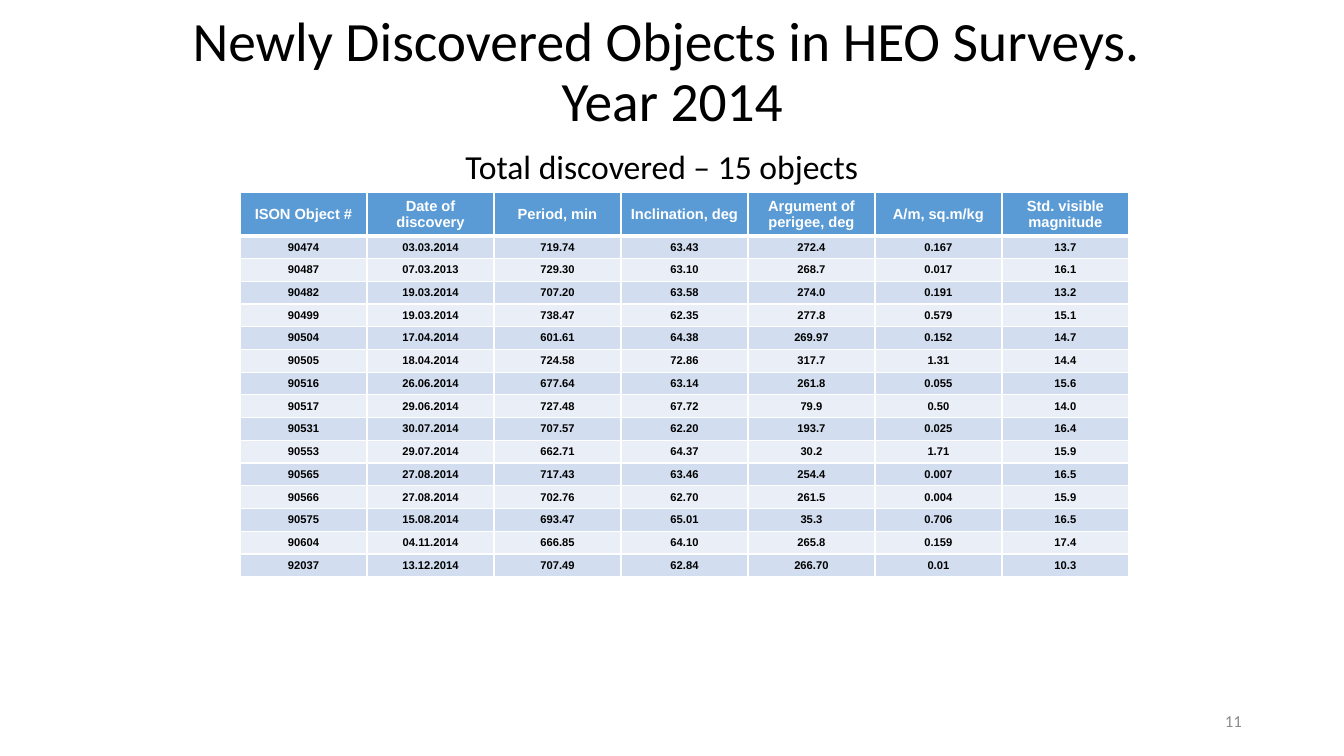
from lxml.etree import SubElement
from pptx import Presentation
from pptx.dml.color import RGBColor
from pptx.enum.text import MSO_ANCHOR, PP_ALIGN
from pptx.oxml.ns import qn
from pptx.util import Cm, Pt

HEADINGS = ["ISON Object #", "Date of discovery", "Period, min", "Inclination, deg",
            "Argument of perigee, deg", "A/m, sq.m/kg", "Std. visible magnitude"]
DISCOVERIES = """
90474 03.03.2014 719.74 63.43 272.4 0.167 13.7
90487 07.03.2013 729.30 63.10 268.7 0.017 16.1
90482 19.03.2014 707.20 63.58 274.0 0.191 13.2
90499 19.03.2014 738.47 62.35 277.8 0.579 15.1
90504 17.04.2014 601.61 64.38 269.97 0.152 14.7
90505 18.04.2014 724.58 72.86 317.7 1.31 14.4
90516 26.06.2014 677.64 63.14 261.8 0.055 15.6
90517 29.06.2014 727.48 67.72 79.9 0.50 14.0
90531 30.07.2014 707.57 62.20 193.7 0.025 16.4
90553 29.07.2014 662.71 64.37 30.2 1.71 15.9
90565 27.08.2014 717.43 63.46 254.4 0.007 16.5
90566 27.08.2014 702.76 62.70 261.5 0.004 15.9
90575 15.08.2014 693.47 65.01 35.3 0.706 16.5
90604 04.11.2014 666.85 64.10 265.8 0.159 17.4
92037 13.12.2014 707.49 62.84 266.70 0.01 10.3
"""
HEADER_FILL = "5B9BD5"
BAND_FILLS = ["D2DEEF", "EAEFF7"]
HEADER_HEIGHT = 1.07


def color(value):
    """Turn a hex string into a colour."""
    return RGBColor.from_string(value)


def apply(target, values):
    """Set every attribute named in a dict of format values."""
    for name, value in values.items():
        setattr(target, name, value)


def format_font(paragraph, size, font_color, name, bold=False):
    """Format the font of the runs in a paragraph."""
    for run in paragraph.runs:
        apply(run.font, {"size": Pt(size), "name": name, "bold": bold})
        run.font.color.rgb = color(font_color)


def add_text(slide, box, text, size, font_color="000000", wrap=True,
             anchor=MSO_ANCHOR.MIDDLE, **layout):
    """Place one paragraph of text in a box given in centimetres."""
    frame = slide.shapes.add_textbox(*map(Cm, box)).text_frame
    apply(frame, {"word_wrap": wrap, "vertical_anchor": anchor})
    paragraph = frame.paragraphs[0]
    paragraph.text = text
    apply(paragraph, layout)
    format_font(paragraph, size, font_color, "Calibri")


def add_borders(cell, top, bottom):
    """Draw white borders around a cell."""
    properties = cell._tc.get_or_add_tcPr()
    for side, width in {"lnL": 1, "lnR": 1, "lnT": top, "lnB": bottom}.items():
        line = SubElement(properties, qn(f"a:{side}"), w=str(Pt(width)))
        SubElement(SubElement(line, qn("a:solidFill")), qn("a:srgbClr"), val="FFFFFF")


def format_cell(cell, row):
    """Format a cell according to its row."""
    is_header = row == 0
    add_borders(cell, 3 if row == 1 else 1, 3 if is_header else 1)
    cell.fill.solid()
    cell.fill.fore_color.rgb = color(HEADER_FILL if is_header else BAND_FILLS[(row - 1) % 2])
    apply(cell, {"vertical_anchor": MSO_ANCHOR.MIDDLE,
                 "margin_left": Cm(0.25), "margin_right": Cm(0.25),
                 "margin_top": Cm(0.1), "margin_bottom": Cm(0.1)})
    paragraph = cell.text_frame.paragraphs[0]
    paragraph.alignment = PP_ALIGN.CENTER
    format_font(paragraph, 10.5 if is_header else 8,
                "FFFFFF" if is_header else "000000", "Arial", True)


def add_discovery_table(slide, box):
    """Fill a box given in centimetres with the table of discovered objects."""
    rows = [HEADINGS] + [line.split() for line in DISCOVERIES.strip().splitlines()]
    table = slide.shapes.add_table(len(rows), len(HEADINGS), *map(Cm, box)).table
    body_height = (box[3] - HEADER_HEIGHT) / (len(rows) - 1)
    for column in table.columns:
        column.width = Cm(box[2] / len(HEADINGS))
    for row, values in enumerate(rows):
        table.rows[row].height = Cm(body_height if row else HEADER_HEIGHT)
        for column, value in enumerate(values):
            cell = table.cell(row, column)
            cell.text = value
            format_cell(cell, row)


def build_survey_slide(presentation):
    """Build the slide of objects discovered in HEO surveys."""
    slide = presentation.slides.add_slide(presentation.slide_layouts[6])
    add_text(slide, (2.34, 0.56, 29.21, 2.59),
             "Newly Discovered Objects in HEO Surveys. \vYear 2014", 39.6,
             alignment=PP_ALIGN.CENTER, line_spacing=0.9)
    add_text(slide, (23.93, 17.65, 7.62, 1.02), "11", 12, "8C8C8C",
             alignment=PP_ALIGN.RIGHT)
    add_discovery_table(slide, (6.05, 4.85, 22.4, 9.67))
    add_text(slide, (11.48, 3.56, 10.52, 1.27), "Total discovered – 15 objects", 24,
             wrap=False, anchor=MSO_ANCHOR.TOP)


def main():
    """Create and save the presentation."""
    presentation = Presentation()
    apply(presentation, {"slide_width": Cm(33.87), "slide_height": Cm(19.05)})
    build_survey_slide(presentation)
    presentation.save("out.pptx")


if __name__ == "__main__":
    main()
